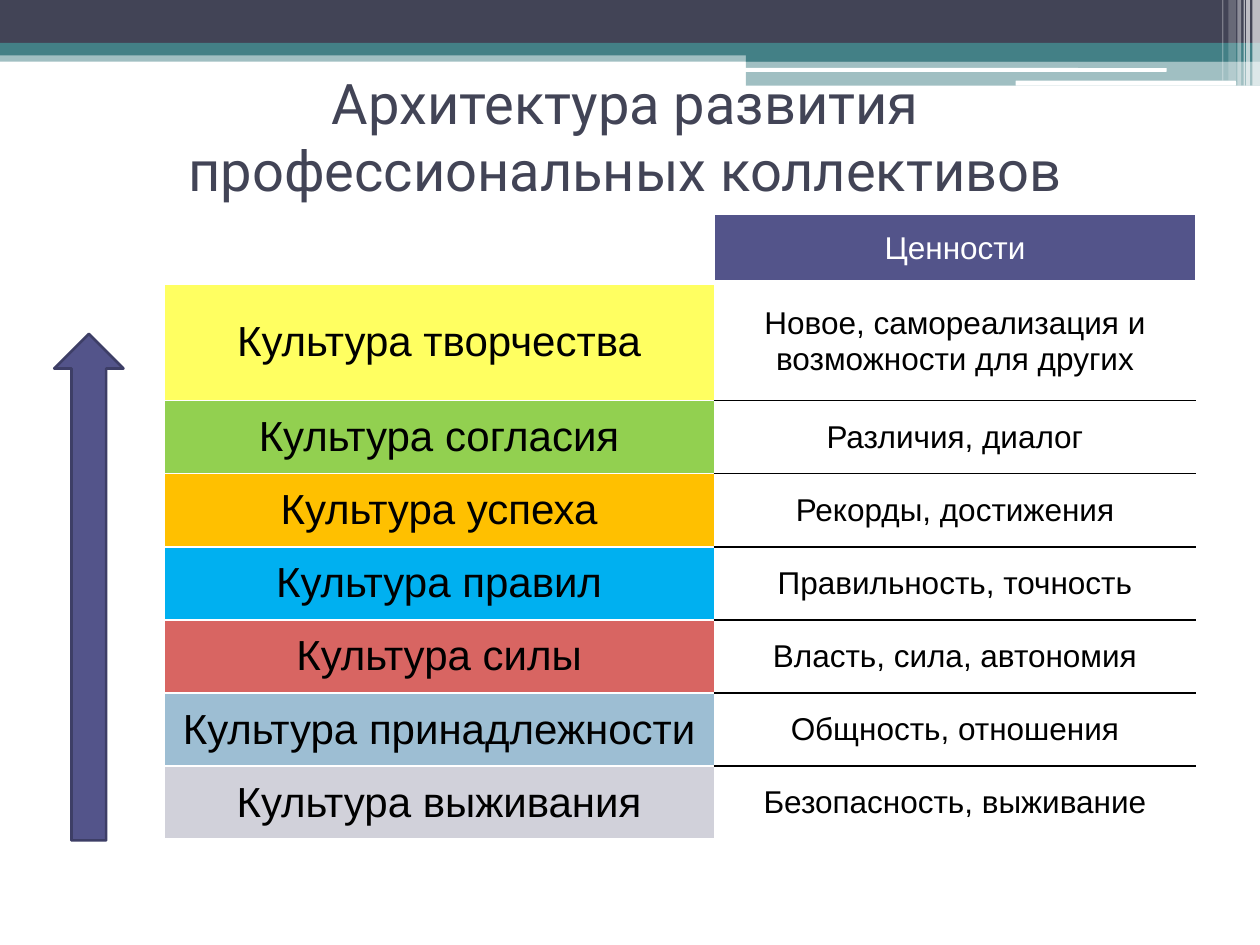
from lxml.etree import SubElement
from pptx import Presentation
from pptx.dml.color import RGBColor
from pptx.enum.shapes import MSO_SHAPE as Preset
from pptx.enum.text import MSO_ANCHOR as Anchor, MSO_AUTO_SIZE as AutoSize, PP_ALIGN as Align
from pptx.oxml.ns import qn
from pptx.util import Emu, Pt

PX = 9144
WHITE = RGBColor(0xFF, 0xFF, 0xFF)
BLACK = RGBColor(0x00, 0x00, 0x00)
SLATE = RGBColor(0x42, 0x44, 0x56)
TEAL = RGBColor(0x43, 0x80, 0x86)
INDIGO = RGBColor(0x53, 0x54, 0x8A)
DARK_INDIGO = RGBColor(0x3D, 0x3E, 0x66)
YELLOW = RGBColor(0xFF, 0xFF, 0x61)
GREEN = RGBColor(0x92, 0xD0, 0x50)
ORANGE = RGBColor(0xFF, 0xC0, 0x00)
BLUE = RGBColor(0x00, 0xB0, 0xF0)
RED = RGBColor(0xD8, 0x65, 0x62)
PALE_BLUE = RGBColor(0x9D, 0xBE, 0xD3)
GREY = RGBColor(0xD1, 0xD1, 0xDA)

TITLE = "Архитектура развития профессиональных коллективов"
VALUES_HEADING = "Ценности"
CULTURES = [
    ("Культура творчества", YELLOW, "Новое, самореализация и возможности для других"),
    ("Культура согласия", GREEN, "Различия, диалог"),
    ("Культура успеха", ORANGE, "Рекорды, достижения"),
    ("Культура правил", BLUE, "Правильность, точность"),
    ("Культура силы", RED, "Власть, сила, автономия"),
    ("Культура принадлежности", PALE_BLUE, "Общность, отношения"),
    ("Культура выживания", GREY, "Безопасность, выживание"),
]
BANDS = [
    (0, 40, 1000, 9, TEAL, 50),
    (0, 0, 1000, 34, SLATE, 100),
    (0, 34, 1000, 10, TEAL, 100),
    (592, 39, 408, 10, TEAL, 100),
    (592, 48, 408, 20, TEAL, 50),
]
ROUNDED_BARS = [(591, 54, 335, 3), (806, 64, 175, 4)]
STRIPES = [
    (994, 6, 68, 65),
    (989, 3, 68, 65),
    (987, 1, 68, 60),
    (982, 3, 68, 40),
    (975, 6, 64, 20),
    (970, 1, 64, 30),
]


def px(length):
    return Emu(length * PX)


def write_text(frame, text, size, color=BLACK, font="Arial", align=Align.CENTER):
    paragraph = frame.paragraphs[0]
    paragraph.alignment = align
    run = paragraph.add_run()
    run.text = text
    run.font.size = Pt(size)
    run.font.name = font
    run.font.bold = False
    run.font.color.rgb = color


def add_block(slide, preset, box, color, opacity=100):
    shape = slide.shapes.add_shape(preset, *map(px, box))
    shape.shadow.inherit = False
    shape.fill.solid()
    shape.fill.fore_color.rgb = color
    shape.line.fill.background()
    if opacity < 100:
        color_element = shape.element.spPr.find(qn("a:solidFill"))[0]
        SubElement(color_element, qn("a:alpha"), val=str(opacity * 1000))
    return shape


def add_header_decoration(slide, left, top):
    for x, y, width, height, color, opacity in BANDS:
        add_block(slide, Preset.RECTANGLE, (left + x, top + y, width, height), color, opacity)
    for x, y, width, height in ROUNDED_BARS:
        add_block(slide, Preset.ROUNDED_RECTANGLE, (left + x, top + y, width, height), WHITE)
    for x, width, height, opacity in STRIPES:
        add_block(slide, Preset.RECTANGLE, (left + x, top, width, height), WHITE, opacity)


def place_title(slide, left, top, width, height):
    title = slide.shapes.title
    slide.shapes.element.append(title.element)
    title.left, title.top, title.width, title.height = map(px, (left, top, width, height))
    frame = title.text_frame
    frame.word_wrap = True
    frame.auto_size = AutoSize.NONE
    frame.vertical_anchor = Anchor.MIDDLE
    frame.margin_left = frame.margin_right = px(15)
    write_text(frame, TITLE, 32, SLATE, "Roboto")


def set_borders(cell, top=WHITE, bottom=WHITE, bottom_width=1):
    properties = cell._tc.get_or_add_tcPr()
    sides = [("L", WHITE, 1), ("R", WHITE, 1), ("T", top, 1), ("B", bottom, bottom_width)]
    for side, color, width in sides:
        line = SubElement(properties, qn(f"a:ln{side}"), w=str(Pt(width)))
        fill = SubElement(line, qn("a:solidFill"))
        SubElement(fill, qn("a:srgbClr"), val=str(color))


def fill_cell(cell, text, size, fill, color=BLACK, **borders):
    set_borders(cell, **borders)
    cell.fill.solid()
    cell.fill.fore_color.rgb = fill
    cell.vertical_anchor = Anchor.MIDDLE
    write_text(cell.text_frame, text, size, color)


def add_culture_table(slide, left, top):
    widths = [437, 382]
    heights = [54, 94] + [58] * (len(CULTURES) - 1)
    box = (left, top, sum(widths), sum(heights))
    table = slide.shapes.add_table(len(heights), len(widths), *map(px, box)).table
    table.first_row = False
    table.horz_banding = False
    for column, width in zip(table.columns, widths):
        column.width = px(width)
    for row, height in zip(table.rows, heights):
        row.height = px(height)
    set_borders(table.cell(0, 0), bottom_width=3)
    table.cell(0, 0).fill.background()
    fill_cell(table.cell(0, 1), VALUES_HEADING, 18, INDIGO, WHITE, bottom_width=3)
    last = len(CULTURES)
    for index, (culture, color, values) in enumerate(CULTURES, 1):
        fill_cell(table.cell(index, 0), culture, 24, color)
        fill_cell(table.cell(index, 1), values, 18, WHITE,
                  top=WHITE if index == 1 else BLACK,
                  bottom=WHITE if index == last else BLACK)


def add_growth_arrow(slide, left, top, width, height):
    arrow = add_block(slide, Preset.UP_ARROW, (left, top, width, height), INDIGO)
    arrow.line.color.rgb = DARK_INDIGO
    arrow.line.width = Pt(1.5)


def main():
    presentation = Presentation()
    presentation.slide_width, presentation.slide_height = px(1000), px(750)
    slide = presentation.slides.add_slide(presentation.slide_layouts[5])
    add_header_decoration(slide, 0, 0)
    place_title(slide, 43, 84, 907, 47)
    add_culture_table(slide, 130, 170)
    add_growth_arrow(slide, 43, 265, 55, 402)
    presentation.save("out.pptx")


if __name__ == "__main__":
    main()
